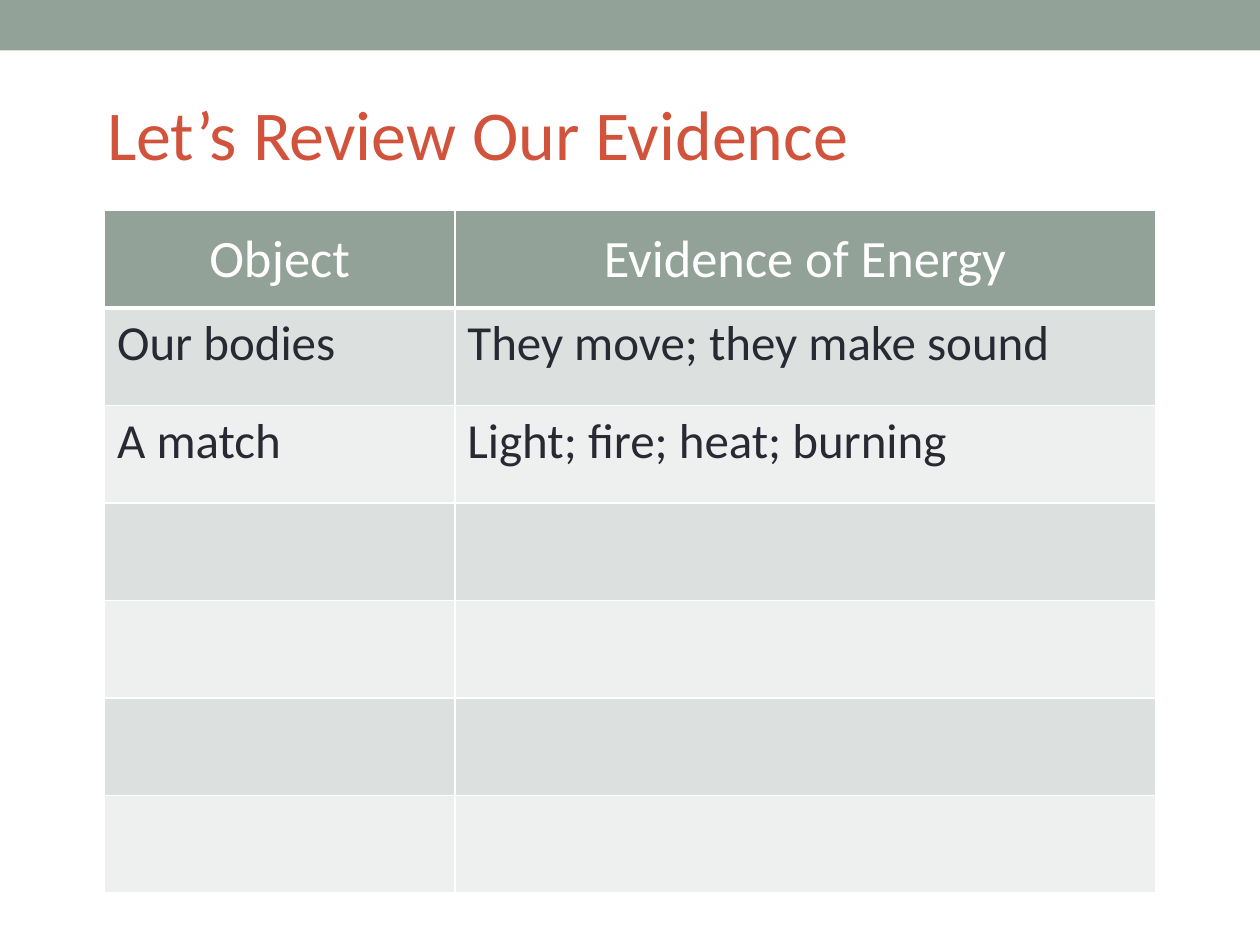
import pptx
import pptx.dml.color
import pptx.enum.shapes
import pptx.enum.text
import pptx.oxml
import pptx.oxml.ns
import pptx.util
from pptx.util import Inches

RGBColor = pptx.dml.color.RGBColor
SAGE = RGBColor(0x93, 0xA2, 0x99)
BAND_DARK = RGBColor(0xDC, 0xE0, 0xDE)
BAND_LIGHT = RGBColor(0xEE, 0xF0, 0xEF)
RED = RGBColor(0xD2, 0x53, 0x3C)
INK = RGBColor(0x29, 0x29, 0x34)
WHITE = RGBColor(0xFF, 0xFF, 0xFF)

ROWS = [
    ("Object", "Evidence of Energy"),
    ("Our bodies", "They move; they make sound"),
    ("A match", "Light; fire; heat; burning"),
] + [("", "")] * 4
COLUMN_WIDTHS = (2.78, 5.56)
TABLE_HEIGHT = 5.42


class SlideBuilder:
    def __init__(self, slide, font_name="Calibri"):
        self.slide = slide
        self.font_name = font_name

    def add_text(self, paragraph, text, size, color):
        run = paragraph.add_run()
        run.text = text
        font = run.font
        font.name = self.font_name
        font.size = pptx.util.Pt(size)
        font.bold = False
        font.color.rgb = color

    def band(self, left, top, width, height, color):
        shape = self.slide.shapes.add_shape(
            pptx.enum.shapes.MSO_SHAPE.RECTANGLE,
            Inches(left), Inches(top), Inches(width), Inches(height))
        shape.shadow.inherit = False
        shape.fill.solid()
        shape.fill.fore_color.rgb = color
        shape.line.fill.background()

    def title(self, text, left, top, width, height):
        title = self.slide.shapes.title
        title.left, title.top = Inches(left), Inches(top)
        title.width, title.height = Inches(width), Inches(height)
        frame = title.text_frame
        frame.word_wrap = True
        frame.auto_size = pptx.enum.text.MSO_AUTO_SIZE.SHAPE_TO_FIT_TEXT
        frame.vertical_anchor = pptx.enum.text.MSO_ANCHOR.TOP
        paragraph = frame.paragraphs[0]
        paragraph.alignment = pptx.enum.text.PP_ALIGN.LEFT
        self.add_text(paragraph, text, 40, RED)

    def cell_borders(self, cell, bottom_width):
        properties = cell._tc.get_or_add_tcPr()
        widths = {"lnL": 1, "lnR": 1, "lnT": 1, "lnB": bottom_width}
        for position, (side, width) in enumerate(widths.items()):
            properties.insert(position, pptx.oxml.parse_xml(
                f'<a:{side} {pptx.oxml.ns.nsdecls("a")} w="{pptx.util.Pt(width)}">'
                f'<a:solidFill><a:srgbClr val="{WHITE}"/></a:solidFill></a:{side}>'))

    def table(self, rows, left, top, column_widths, height):
        table = self.slide.shapes.add_table(
            len(rows), len(column_widths), Inches(left), Inches(top),
            Inches(sum(column_widths)), Inches(height)).table
        for column, width in zip(table.columns, column_widths):
            column.width = Inches(width)
        for row_index, texts in enumerate(rows):
            is_header = row_index == 0
            band_color = BAND_DARK if row_index % 2 else BAND_LIGHT
            for column_index, text in enumerate(texts):
                cell = table.cell(row_index, column_index)
                cell.fill.solid()
                cell.fill.fore_color.rgb = SAGE if is_header else band_color
                self.cell_borders(cell, 3 if is_header else 1)
                paragraph = cell.text_frame.paragraphs[0]
                if is_header:
                    cell.vertical_anchor = pptx.enum.text.MSO_ANCHOR.MIDDLE
                    paragraph.alignment = pptx.enum.text.PP_ALIGN.CENTER
                if text:
                    self.add_text(paragraph, text, 30 if is_header else 28,
                                  WHITE if is_header else INK)


def main():
    presentation = pptx.Presentation()
    presentation.slide_width = Inches(10)
    presentation.slide_height = Inches(7.5)
    builder = SlideBuilder(
        presentation.slides.add_slide(presentation.slide_layouts[5]))
    builder.band(0, 0, 10, 0.4, SAGE)
    builder.table(ROWS, 0.83, 1.67, COLUMN_WIDTHS, TABLE_HEIGHT)
    builder.title("Let’s Review Our Evidence", 0.75, 0.67, 8.58, 0.77)
    presentation.save("out.pptx")


if __name__ == "__main__":
    main()
